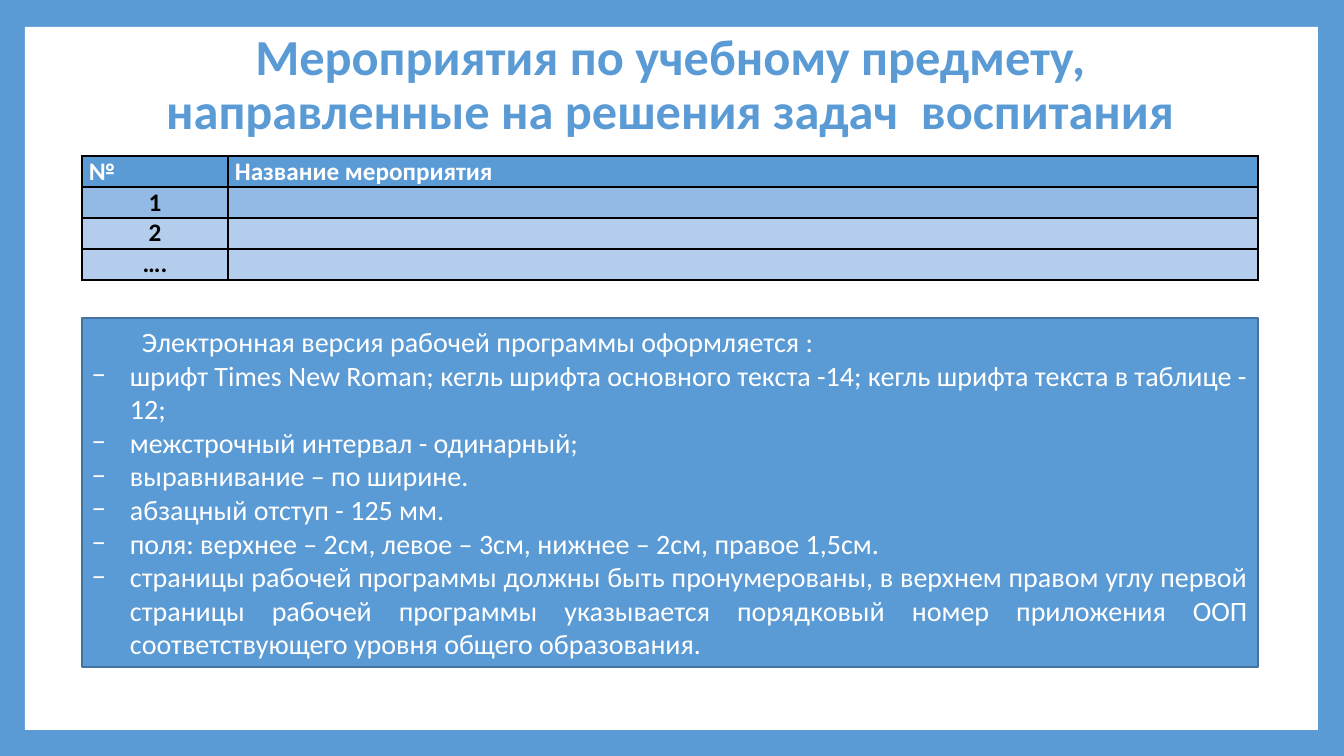
from pptx import Presentation
from pptx.dml.color import RGBColor
from pptx.enum.shapes import MSO_SHAPE
from pptx.enum.text import MSO_ANCHOR, PP_ALIGN
from pptx.oxml import parse_xml
from pptx.oxml.ns import nsdecls
from pptx.util import Pt

PX = 914400 / 100.8
BLUE = RGBColor(0x5B, 0x9B, 0xD5)
EDGE = RGBColor(0x43, 0x73, 0x9E)
MID = RGBColor(0x92, 0xBA, 0xE5)
PALE = RGBColor(0xB5, 0xCD, 0xED)
WHITE = RGBColor(0xFF, 0xFF, 0xFF)
BLACK = RGBColor(0, 0, 0)


def px(*nums):
    """Turn px lengths into EMU."""
    return [round(n * PX) for n in nums]


def style(para, size, color, bold=False):
    for run in para.runs:
        run.font.name = "Calibri"
        run.font.size = Pt(size)
        run.font.bold = bold
        run.font.color.rgb = color


deck = Presentation()
deck.slide_width, deck.slide_height = px(1344, 756)
slide = deck.slides.add_slide(deck.slide_layouts[6])
slide.background.fill.solid()
slide.background.fill.fore_color.rgb = BLUE
shapes = slide.shapes

# White page inside the blue frame
page = shapes.add_shape(MSO_SHAPE.RECTANGLE, *px(25, 27, 1293, 703))
page.shadow.inherit = False
page.fill.solid()
page.fill.fore_color.rgb = WHITE
page.line.fill.background()

# Title
title = shapes.add_textbox(*px(126, 32, 1089, 108)).text_frame
title.word_wrap = True
title.margin_top = title.margin_bottom = 0
title.vertical_anchor = MSO_ANCHOR.MIDDLE
title.text = "Мероприятия по учебному предмету, направленные на решения задач  воспитания"
head = title.paragraphs[0]
head.alignment = PP_ALIGN.CENTER
head.line_spacing = 0.9
style(head, 36, BLUE, True)

# Table of events
ROWS = [("№", "Название мероприятия"), ("1", ""), ("2", ""), ("….", "")]
FILLS = [BLUE, MID, PALE, PALE]
table = shapes.add_table(4, 2, *px(82, 156, 1176, 124)).table
for col, wide in zip(table.columns, px(146, 1030)):
    col.width = wide
for r, texts in enumerate(ROWS):
    table.rows[r].height = px(31)[0]
    for c, text in enumerate(texts):
        cell = table.cell(r, c)
        cell.margin_left = px(0 if r else 7)[0]
        cell.margin_right = cell.margin_top = cell.margin_bottom = 0
        props = cell._tc.get_or_add_tcPr()
        for side in "LRTB":
            props.append(parse_xml(
                f'<a:ln{side} {nsdecls("a")} w="12700"><a:solidFill>'
                f'<a:srgbClr val="{BLACK}"/></a:solidFill></a:ln{side}>'))
        cell.fill.solid()
        cell.fill.fore_color.rgb = FILLS[r]
        cell.text = text
        para = cell.text_frame.paragraphs[0]
        para.alignment = PP_ALIGN.CENTER if r else PP_ALIGN.LEFT
        style(para, 18, BLACK if r else WHITE, True)

# Layout rules for the document
RULES = [
    "Электронная версия рабочей программы оформляется :",
    "шрифт Times New Roman; кегль шрифта основного текста -14; кегль шрифта текста в таблице - 12;",
    "межстрочный интервал - одинарный;",
    "выравнивание – по ширине.",
    "абзацный отступ - 125 мм.",
    "поля: верхнее – 2см, левое – 3см, нижнее – 2см, правое 1,5см.",
    "страницы рабочей программы должны быть пронумерованы, в верхнем правом углу первой "
    "страницы рабочей программы указывается порядковый номер приложения ООП "
    "соответствующего уровня общего образования.",
]
panel = shapes.add_shape(MSO_SHAPE.RECTANGLE, *px(82, 318, 1176, 349))
panel.shadow.inherit = False
panel.fill.solid()
panel.fill.fore_color.rgb = BLUE
panel.line.color.rgb = EDGE
panel.line.width = Pt(1.5)
body = panel.text_frame
body.word_wrap = True
body.vertical_anchor = MSO_ANCHOR.MIDDLE
body.text = "\n".join(RULES)
for i, para in enumerate(body.paragraphs):
    para.alignment = PP_ALIGN.LEFT
    props = para._p.get_or_add_pPr()
    left, hang = px(38, -38) if i else px(50, 0)
    props.set("marL", str(left))
    props.set("indent", str(hang))
    if i:
        props.append(parse_xml(f'<a:buFont {nsdecls("a")} typeface="Calibri"/>'))
        props.append(parse_xml(f'<a:buChar {nsdecls("a")} char="−"/>'))
    style(para, 20, WHITE)
body.paragraphs[-1].alignment = PP_ALIGN.JUSTIFY

deck.save("out.pptx")
